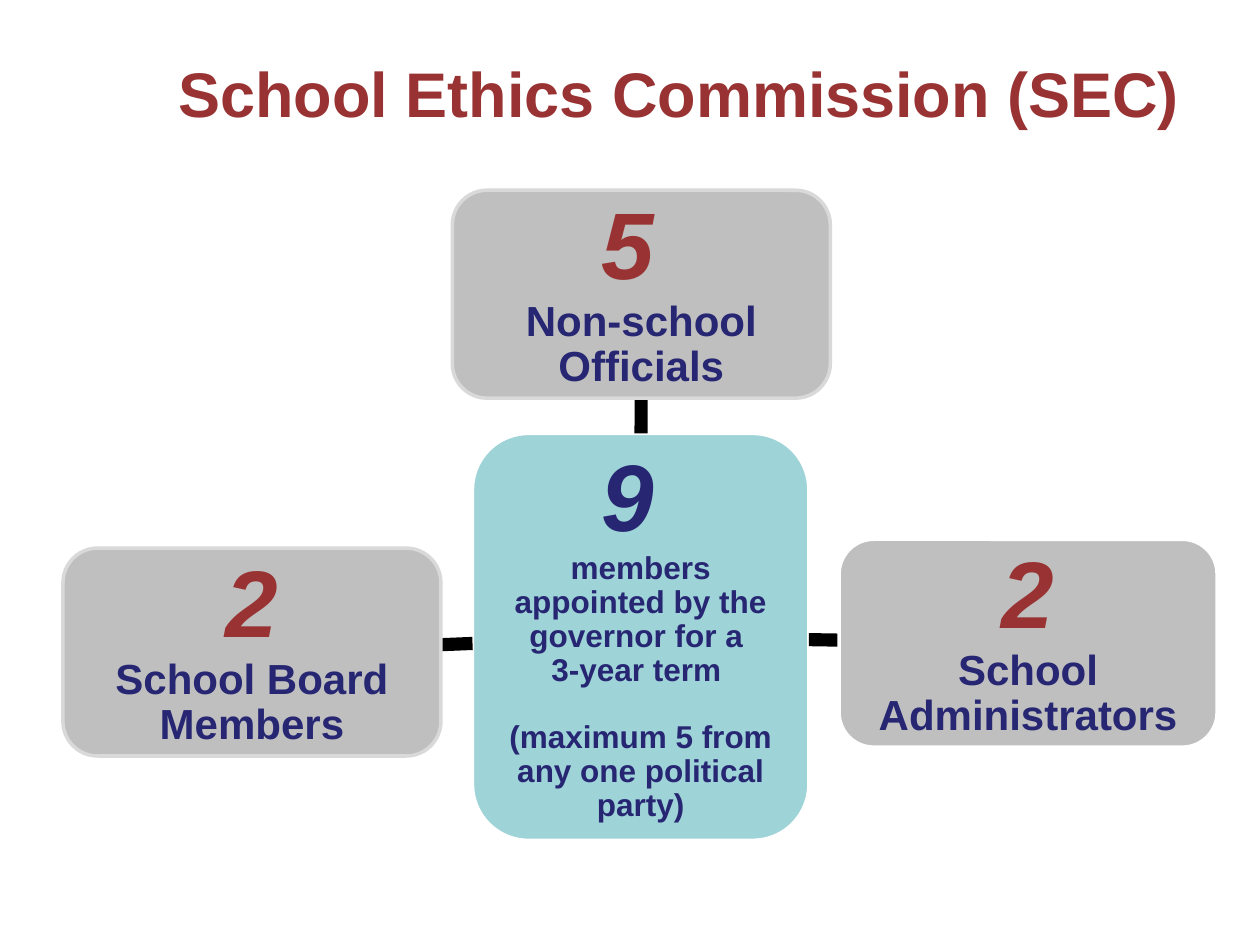
from dataclasses import dataclass

import pptx
import pptx.dml.color
import pptx.enum.shapes
import pptx.enum.text
import pptx.oxml
import pptx.oxml.ns
import pptx.util

RGBColor = pptx.dml.color.RGBColor
RED = RGBColor(0x99, 0x33, 0x33)
NAVY = RGBColor(0x26, 0x26, 0x73)
TEAL = RGBColor(0x9E, 0xD3, 0xD7)
GRAY = RGBColor(0xBF, 0xBF, 0xBF)
PALE_GRAY = RGBColor(0xD9, 0xD9, 0xD9)
WHITE = RGBColor(0xFF, 0xFF, 0xFF)
BLACK = RGBColor(0, 0, 0)

FONT = "Arial"
COLUMNS, ROWS = 100, 75
SLIDE_WIDTH, SLIDE_HEIGHT = pptx.util.Inches(10), pptx.util.Inches(7.5)
CENTER = pptx.enum.text.PP_ALIGN.CENTER
MIDDLE = pptx.enum.text.MSO_ANCHOR.MIDDLE


@dataclass(frozen=True)
class Area:
    column: float
    row: float
    columns: float
    rows: float

    @property
    def center(self) -> tuple[float, float]:
        return self.column + self.columns / 2, self.row + self.rows / 2

    def edge_toward(self, other: "Area") -> tuple[float, float]:
        (x, y), (other_x, other_y) = self.center, other.center
        dx, dy = other_x - x, other_y - y
        share = 1 / max(abs(dx) / (self.columns / 2), abs(dy) / (self.rows / 2))
        return x + dx * share, y + dy * share


@dataclass(frozen=True)
class Group:
    area: Area
    count: str
    count_color: RGBColor
    paragraphs: tuple[str, ...]
    size: int
    fill: RGBColor
    outline: RGBColor


COMMISSION = Group(
    Area(37.5, 34.4, 26.7, 32.3), "9 ", NAVY,
    ("members appointed by the governor for a \v3-year term ",
     "(maximum 5 from any one political party)"),
    18, TEAL, WHITE)
MEMBERS = (
    Group(Area(66.6, 42.8, 30, 16.5), "2", RED,
          ("School Administrators",), 24, GRAY, WHITE),
    Group(Area(35.9, 15.1, 30, 16.5), "5 ", RED,
          ("Non-school Officials",), 24, GRAY, PALE_GRAY),
    Group(Area(5, 43.5, 30, 16.5), "2", RED,
          ("School Board Members",), 24, GRAY, PALE_GRAY),
)


def across(columns: float) -> int:
    return round(SLIDE_WIDTH * columns / COLUMNS)


def down(rows: float) -> int:
    return round(SLIDE_HEIGHT * rows / ROWS)


def place(area: Area) -> tuple[int, int, int, int]:
    return across(area.column), down(area.row), across(area.columns), down(area.rows)


def add_title(page, text: str, area: Area) -> None:
    title = page.shapes.title
    title.left, title.top, title.width, title.height = place(area)
    title.text_frame.text = text
    title.text_frame.vertical_anchor = MIDDLE
    para = title.text_frame.paragraphs[0]
    para.alignment = CENTER
    para.font.name, para.font.size, para.font.bold = FONT, pptx.util.Pt(36), True
    para.font.color.rgb = RED


def add_group(page, group: Group) -> None:
    box = page.shapes.add_shape(
        pptx.enum.shapes.MSO_SHAPE.ROUNDED_RECTANGLE, *place(group.area))
    box.shadow.inherit = False
    box.fill.solid()
    box.fill.fore_color.rgb = group.fill
    box.line.color.rgb = group.outline
    box.line.width = pptx.util.Pt(2)
    frame = box.text_frame
    frame.word_wrap = True
    frame.vertical_anchor = MIDDLE
    frame.margin_left = frame.margin_right = pptx.util.Inches(0.15)
    frame.margin_top = frame.margin_bottom = pptx.util.Inches(0.15)
    for index, text in enumerate(group.paragraphs):
        para = frame.paragraphs[0] if index == 0 else frame.add_paragraph()
        para.alignment = CENTER
        para.line_spacing = 0.9
        if index < len(group.paragraphs) - 1:
            para.space_after = pptx.util.Pt(19)
        para.font.name, para.font.bold = FONT, True
        if index == 0:
            add_span(para, group.count, 54, group.count_color, italic=True)
            para.add_line_break()
        for number, line in enumerate(text.split("\v")):
            if number:
                para.add_line_break()
            add_span(para, line, group.size, NAVY)


def add_span(para, text: str, size: int, color: RGBColor, italic: bool = False) -> None:
    span = para.add_run()
    span.text = text
    span.font.name, span.font.bold, span.font.italic = FONT, True, italic
    span.font.size = pptx.util.Pt(size)
    span.font.color.rgb = color


def add_link(page, start: Area, end: Area) -> None:
    start_x, start_y = start.edge_toward(end)
    end_x, end_y = end.edge_toward(start)
    link = page.shapes.add_connector(
        pptx.enum.shapes.MSO_CONNECTOR.STRAIGHT,
        across(start_x), down(start_y), across(end_x), down(end_y))
    link.line.color.rgb = BLACK
    link.line.width = pptx.util.Pt(7.5)
    properties = link._element.spPr
    properties.append(pptx.oxml.parse_xml(
        f"<a:effectLst {pptx.oxml.ns.nsdecls('a')}/>"))


def main() -> None:
    deck = pptx.Presentation()
    deck.slide_width, deck.slide_height = SLIDE_WIDTH, SLIDE_HEIGHT
    page = deck.slides.add_slide(deck.slide_layouts[5])
    add_title(page, "School Ethics Commission (SEC)", Area(11.4, 3.6, 85, 7.5))
    add_group(page, COMMISSION)
    for group in MEMBERS:
        add_link(page, COMMISSION.area, group.area)
        add_group(page, group)
    deck.save("out.pptx")


if __name__ == "__main__":
    main()
